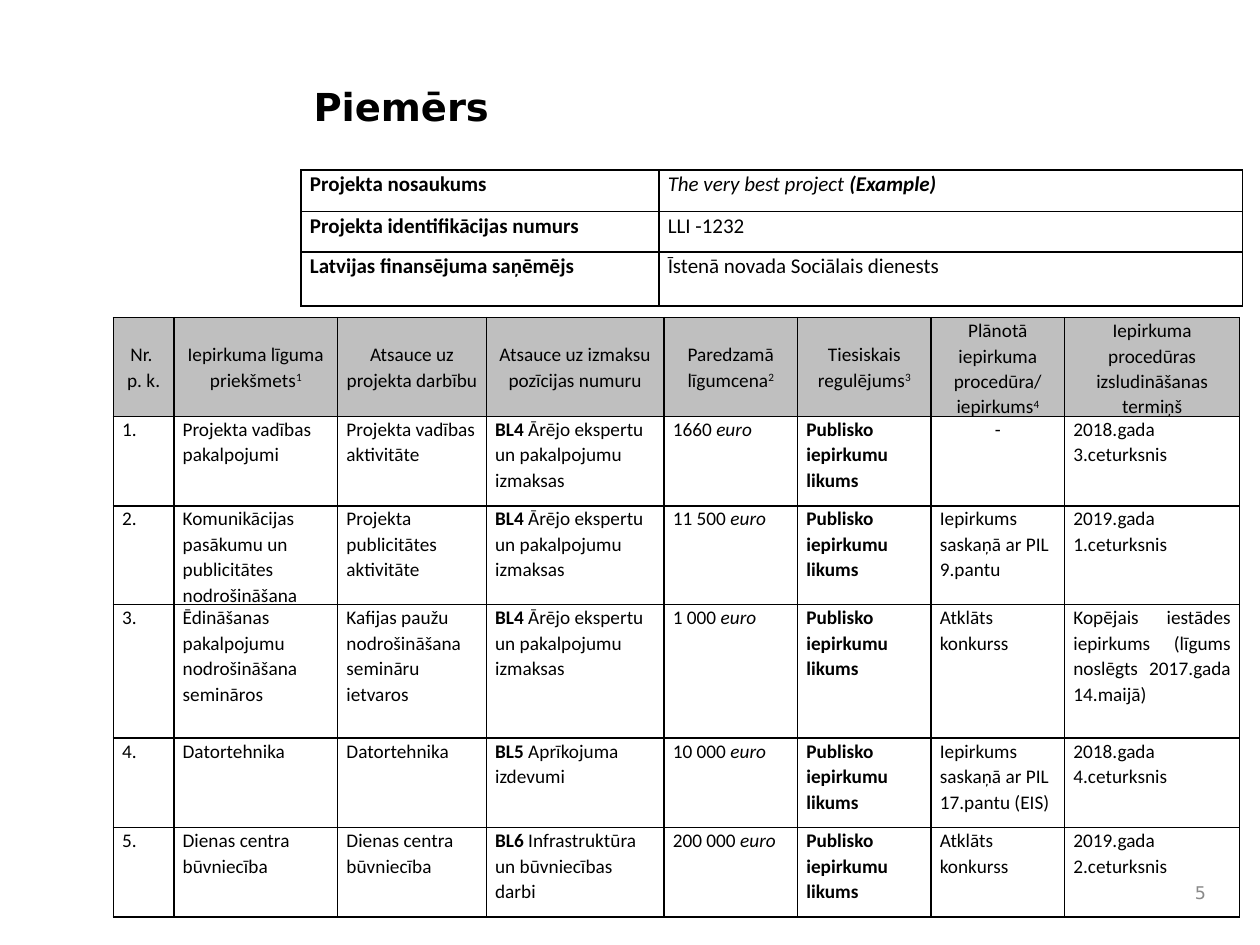
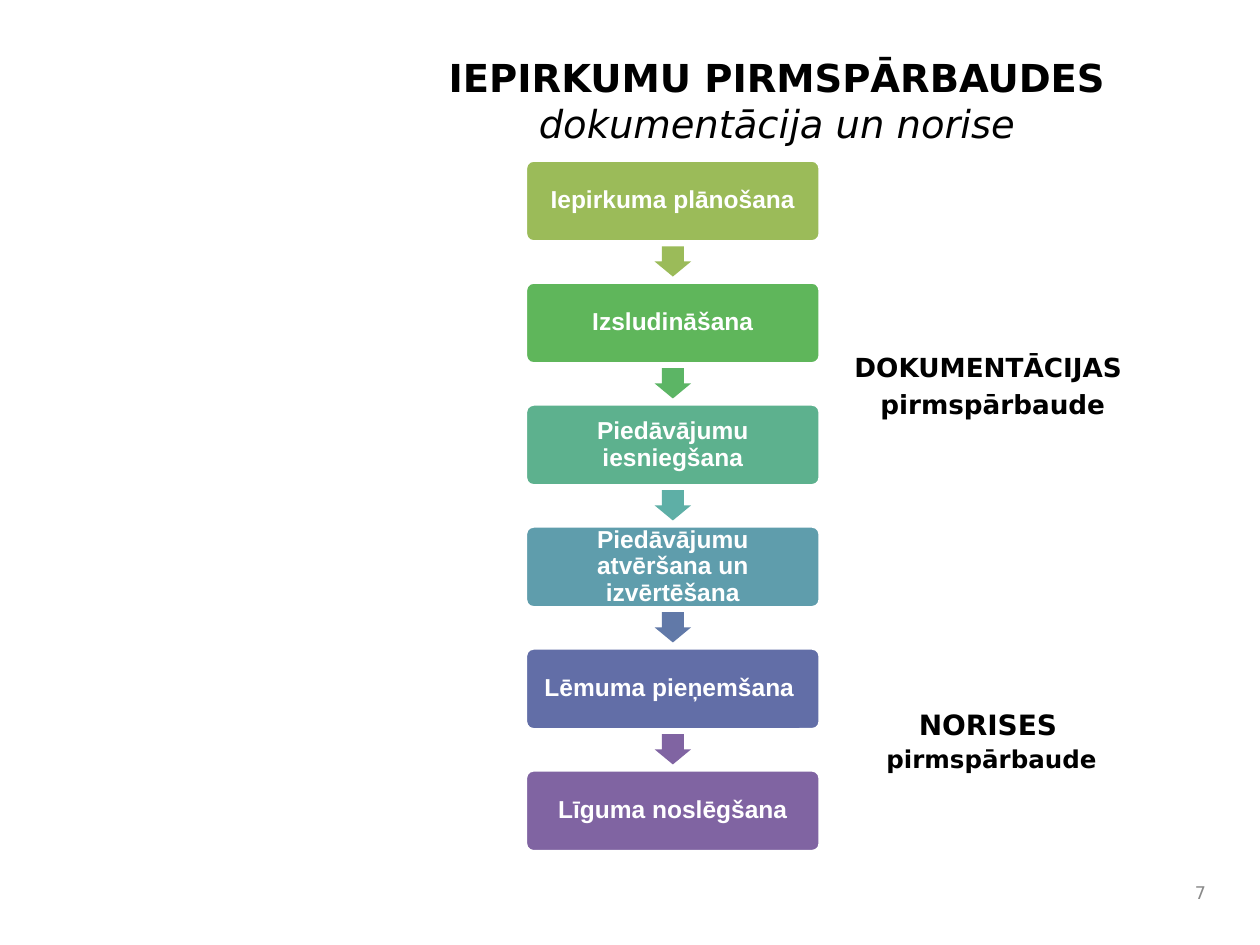
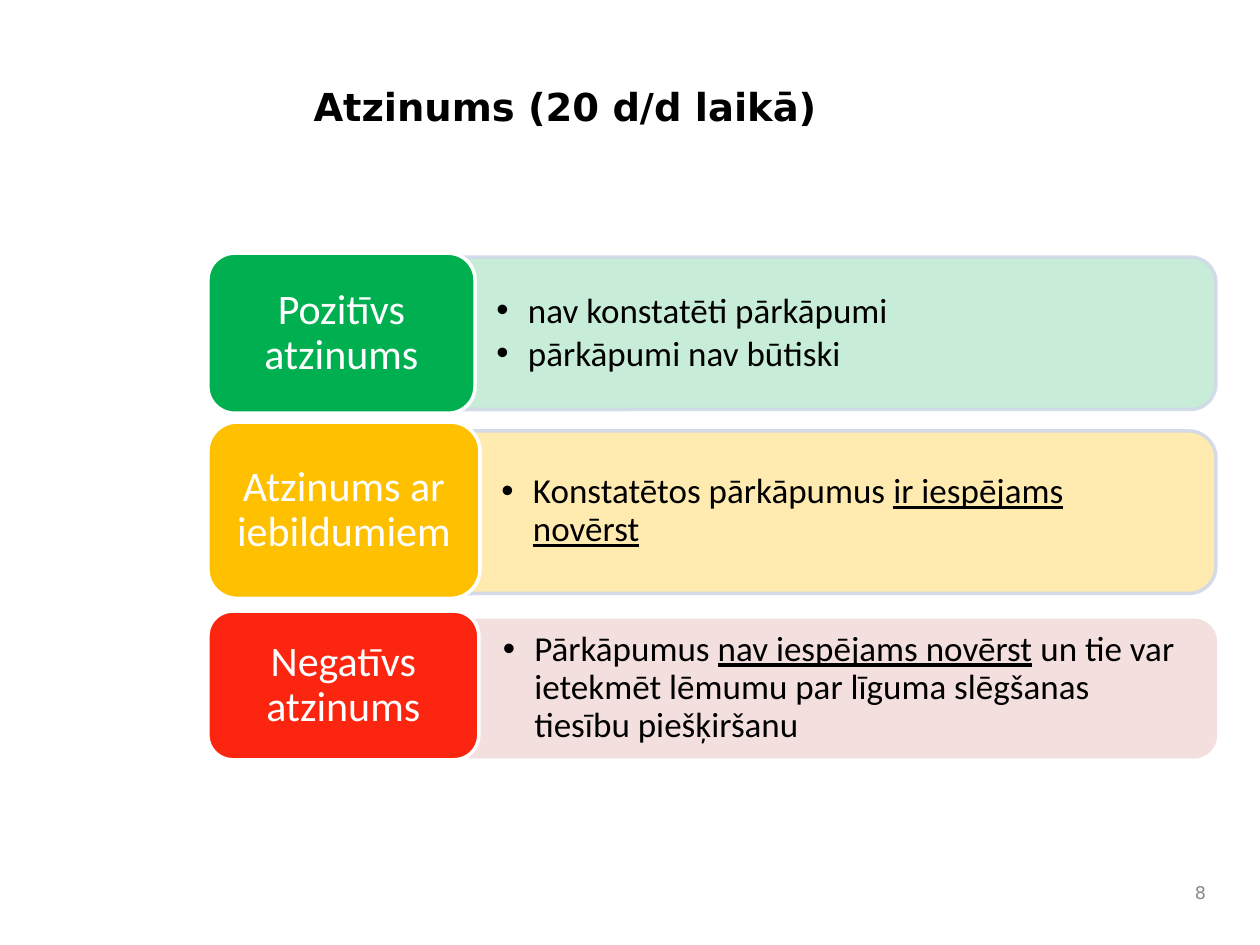
"""Build three slides on procurement plans and pre-checks."""
import dataclasses
import typing

import lxml.etree
import pptx
import pptx.dml.color
import pptx.enum.shapes
import pptx.enum.text
import pptx.oxml.ns
import pptx.slide
import pptx.table
import pptx.text.text
import pptx.util

Inches = pptx.util.Inches
Pt = pptx.util.Pt
qn = pptx.oxml.ns.qn
Align = pptx.enum.text.PP_ALIGN
Anchor = pptx.enum.text.MSO_ANCHOR
Kind = pptx.enum.shapes.MSO_SHAPE


@dataclasses.dataclass(frozen=True)
class Theme:
    """Hold the colours, fonts and type sizes."""
    black: str = "000000"
    white: str = "FFFFFF"
    grey: str = "898989"
    head: str = "BFBFBF"
    edge: str = "D0D8E8"
    sans: str = "DejaVu Sans"
    body: str = "Calibri"
    plain: str = "Arial"
    title: float = 22
    label: float = 24
    point: float = 20
    step: float = 14
    note: float = 15
    fact: float = 12
    cell: float = 11
    page: float = 10


THEME = Theme()


class Run(typing.NamedTuple):
    """Text with marks: b bold, i italic, u underline, ^ superscript."""
    text: str
    look: str = ""
    size: float = 0


class Box(typing.NamedTuple):
    """Place and size in inches."""
    left: float
    top: float
    width: float
    height: float


class Style(typing.NamedTuple):
    """Type and paragraph settings of a text."""
    font: str
    size: float
    color: str = THEME.black
    align: Align = Align.LEFT
    space: float = 1
    before: float = 0
    after: float = 0
    dots: bool = False
    anchor: Anchor = Anchor.TOP
    inset: tuple[float, float] = (0.1, 0.05)


Line = tuple[Run, ...]

TITLE = Style(THEME.sans, THEME.title)
PAGE = Style(THEME.sans, THEME.page, THEME.grey, Align.RIGHT, anchor=Anchor.MIDDLE)
FACT = Style(THEME.body, THEME.fact, space=1.07, inset=(0.07, 0))
CELL = FACT._replace(size=THEME.cell)
HEAD = CELL._replace(align=Align.CENTER, anchor=Anchor.MIDDLE)
STEP = Style(THEME.plain, THEME.step, THEME.white, Align.CENTER, 0.9,
             anchor=Anchor.MIDDLE, inset=(0.08, 0.08))
NOTE = Style(THEME.sans, THEME.note, align=Align.CENTER, before=3)
LABEL = Style(THEME.body, THEME.label, THEME.white, Align.CENTER, 0.9,
              anchor=Anchor.MIDDLE, inset=(0.16, 0.11))
POINT = Style(THEME.body, THEME.point, space=0.9, after=3, dots=True,
              anchor=Anchor.MIDDLE, inset=(0.27, 0.14))


def tint(code: str) -> pptx.dml.color.RGBColor:
    """Turn a hex code into a colour."""
    return pptx.dml.color.RGBColor.from_string(code)


def place(box: Box) -> list[pptx.util.Length]:
    """Turn a box into lengths."""
    return [Inches(side) for side in box]


def write(frame: pptx.text.text.TextFrame, lines: typing.Sequence[Line], style: Style) -> None:
    """Fill a text frame run by run."""
    for at, line in enumerate(lines):
        para = frame.add_paragraph() if at else frame.paragraphs[0]
        if style.dots:
            props = para._p.get_or_add_pPr()
            props.set("marL", str(Inches(0.25)))
            props.set("indent", str(Inches(-0.25)))
            lxml.etree.SubElement(props, qn("a:buFont"), typeface="Arial")
            lxml.etree.SubElement(props, qn("a:buChar"), char="•")
        para.alignment = style.align
        para.line_spacing = style.space
        para.space_before = Pt(style.before if at else 0)
        para.space_after = Pt(style.after)
        for part in line:
            for turn, piece in enumerate(part.text.split("\n")):
                if turn:
                    para.add_line_break()
                if not piece:
                    continue
                run = para.add_run()
                run.text = piece
                font = run.font
                font.name = style.font
                font.size = Pt(part.size or style.size)
                font.color.rgb = tint(style.color)
                font.bold = "b" in part.look
                font.italic = "i" in part.look
                font.underline = "u" in part.look
                if "^" in part.look:
                    run._r.get_or_add_rPr().set("baseline", "30000")


def settle(frame: pptx.text.text.TextFrame, lines: typing.Sequence[Line], style: Style) -> None:
    """Set wrap, anchor and insets, then write the text."""
    frame.word_wrap = True
    frame.vertical_anchor = style.anchor
    frame.margin_left = frame.margin_right = Inches(style.inset[0])
    frame.margin_top = frame.margin_bottom = Inches(style.inset[1])
    write(frame, lines, style)


def add_text(slide: pptx.slide.Slide, box: Box, lines: typing.Sequence[Line], style: Style) -> None:
    """Add a text box."""
    settle(slide.shapes.add_textbox(*place(box)).text_frame, lines, style)


def add_form(slide: pptx.slide.Slide, kind: Kind, box: Box, fill: str, line: str = "") -> typing.Any:
    """Add a flat preset shape."""
    form = slide.shapes.add_shape(kind, *place(box))
    form.shadow.inherit = False
    form.fill.solid()
    form.fill.fore_color.rgb = tint(fill)
    if line:
        form.line.color.rgb = tint(line)
        form.line.width = Pt(2)
    else:
        form.line.fill.background()
    return form


def add_cell(cell: typing.Any, line: Line, style: Style, fill: str) -> None:
    """Style one table cell with black borders."""
    cell.margin_left = cell.margin_right = Inches(style.inset[0])
    cell.margin_top = cell.margin_bottom = Inches(style.inset[1])
    cell.vertical_anchor = style.anchor
    if fill:
        cell.fill.solid()
        cell.fill.fore_color.rgb = tint(fill)
    else:
        cell.fill.background()
    props = cell._tc.get_or_add_tcPr()
    for at, side in enumerate("LRTB"):
        edge = lxml.etree.Element(qn(f"a:ln{side}"), w=str(Pt(1)))
        paint = lxml.etree.SubElement(edge, qn("a:solidFill"))
        lxml.etree.SubElement(paint, qn("a:srgbClr"), val=THEME.black)
        props.insert(at, edge)
    write(cell.text_frame, [line], style)


def add_grid(slide: pptx.slide.Slide, left: float, top: float, wide: typing.Sequence[float],
             tall: typing.Sequence[float]) -> pptx.table.Table:
    """Add a bare table with set columns and rows."""
    box = Box(left, top, sum(wide), sum(tall))
    grid = slide.shapes.add_table(len(tall), len(wide), *place(box)).table
    grid.first_row = grid.horz_banding = False
    for col, width in zip(grid.columns, wide):
        col.width = Inches(width)
    for row, height in zip(grid.rows, tall):
        row.height = Inches(height)
    return grid


def add_slide(deck: typing.Any, page: str, title: Line, box: Box,
              align: Align = Align.LEFT) -> pptx.slide.Slide:
    """Add a blank slide with its title and number."""
    slide = deck.slides.add_slide(deck.slide_layouts[6])
    add_text(slide, box, [title], TITLE._replace(align=align))
    add_text(slide, Box(9.23, 6.92, 0.44, 0.33), [(Run(page),)], PAGE)
    return slide


FACTS: list[tuple[str, Line]] = [
    ("Projekta nosaukums", (Run("The very best project ", "i"), Run("(Example)", "bi"))),
    ("Projekta identifikācijas numurs", (Run("LLI -1232"),)),
    ("Latvijas finansējuma saņēmējs", (Run("Īstenā novada Sociālais dienests"),)),
]

HEADS = [
    ("Nr. \np. k.", ""),
    ("Iepirkuma līguma priekšmets", "1"),
    ("Atsauce uz projekta darbību", ""),
    ("Atsauce uz izmaksu pozīcijas numuru", ""),
    ("Paredzamā līgumcena", "2"),
    ("Tiesiskais regulējums", "3"),
    ("Plānotā iepirkuma procedūra/\niepirkums", "4"),
    ("Iepirkuma procedūras izsludināšanas termiņš", ""),
]


class Plan(typing.NamedTuple):
    """One planned purchase."""
    goal: str
    task: str
    code: str
    cost: str
    price: str
    way: str
    term: str


EXPERT = "Ārējo ekspertu un pakalpojumu izmaksas"
PLANS = [
    Plan("Projekta vadības pakalpojumi", "Projekta vadības aktivitāte", "BL4", EXPERT,
         "1660", "-", "2018.gada 3.ceturksnis"),
    Plan("Komunikācijas pasākumu un publicitātes nodrošināšana",
         "Projekta publicitātes aktivitāte", "BL4", EXPERT,
         "11 500", "Iepirkums saskaņā ar PIL 9.pantu", "2019.gada 1.ceturksnis"),
    Plan("Ēdināšanas pakalpojumu nodrošināšana semināros",
         "Kafijas paužu nodrošināšana semināru ietvaros", "BL4", EXPERT, "1 000",
         "Atklāts konkurss", "Kopējais iestādes iepirkums (līgums noslēgts 2017.gada 14.maijā)"),
    Plan("Datortehnika", "Datortehnika", "BL5", "Aprīkojuma izdevumi", "10 000",
         "Iepirkums saskaņā ar PIL 17.pantu (EIS)", "2018.gada 4.ceturksnis"),
    Plan("Dienas centra būvniecība", "Dienas centra būvniecība", "BL6",
         "Infrastruktūra un būvniecības darbi", "200 000", "Atklāts konkurss",
         "2019.gada 2.ceturksnis"),
]


def draw_plan(deck: typing.Any) -> None:
    """Draw the sample purchase plan."""
    slide = add_slide(deck, "5", (Run("Piemērs", "b"),), Box(2.39, 0.61, 7.11, 0.94))
    grid = add_grid(slide, 2.39, 1.35, (2.84, 4.63), (0.33, 0.32, 0.43))
    for row, (name, value) in enumerate(FACTS):
        add_cell(grid.cell(row, 0), (Run(name, "b"),), FACT, "")
        add_cell(grid.cell(row, 1), value, FACT, "")

    grid = add_grid(slide, 0.9, 2.52, (0.48, 1.3, 1.18, 1.41, 1.06, 1.06, 1.06, 1.39),
                    (0.78, 0.71, 0.78, 1.06, 0.71, 0.71))
    for col, (name, mark) in enumerate(HEADS):
        add_cell(grid.cell(0, col), (Run(name), Run(mark, "^")), HEAD, THEME.head)
    for row, plan in enumerate(PLANS, 1):
        lines: list[Line] = [
            (Run(f"{row}."),),
            (Run(plan.goal),),
            (Run(plan.task),),
            (Run(plan.code, "b"), Run(f" {plan.cost}")),
            (Run(f"{plan.price} "), Run("euro", "i")),
            (Run("Publisko iepirkumu likums", "b"),),
            (Run(plan.way),),
            (Run(plan.term),),
        ]
        for col, line in enumerate(lines):
            align = Align.JUSTIFY if col in (0, 4, 5, 7) else Align.LEFT
            if line[0].text == "-":
                align = Align.CENTER
            add_cell(grid.cell(row, col), line, CELL._replace(align=align), "")


STEPS = [
    ("Iepirkuma plānošana", "9BBB59", "9BBB59"),
    ("Izsludināšana", "5FB65B", "5CB565"),
    ("Piedāvājumu iesniegšana", "5DB18E", "5EAFA6"),
    ("Piedāvājumu atvēršana un izvērtēšana", "5F9DAC", "6179A8"),
    ("Lēmuma pieņemšana ", "626EA7", "8064A2"),
    ("Līguma noslēgšana", "8064A2", ""),
]


def draw_steps(deck: typing.Any) -> None:
    """Draw the chain of purchase steps."""
    title = (Run("IEPIRKUMU PIRMSPĀRBAUDES\n", "b"), Run("dokumentācija un norise", "i"))
    slide = add_slide(deck, "7", title, Box(2.83, 0.38, 6.67, 0.88), Align.CENTER)
    pitch = (6.11 - 1.27) / (len(STEPS) - 1)
    for at, (name, fill, next_fill) in enumerate(STEPS):
        top = 1.27 + at * pitch
        step = add_form(slide, Kind.ROUNDED_RECTANGLE, Box(4.17, top, 2.34, 0.65), fill, THEME.white)
        step.adjustments[0] = 0.1
        settle(step.text_frame, [(Run(name, "b"),)], STEP)
        if next_fill:
            arrow = add_form(slide, Kind.RIGHT_ARROW, Box(5.22, top + 0.66, 0.24, 0.29), next_fill)
            arrow.rotation = 90
            arrow.adjustments[0] = 0.6
            arrow.adjustments[1] = 0.5
    add_text(slide, Box(6.68, 2.74, 2.4, 0.69),
             [(Run("DOKUMENTĀCIJAS ", "b"),), (Run("pirmspārbaude", "b"),)], NOTE)
    add_text(slide, Box(6.9, 5.6, 1.94, 0.64),
             [(Run("NORISES", "b", 16), Run(" ", "b", 12)), (Run("pirmspārbaude", "b", 14),)],
             NOTE._replace(space=0.9))


class Verdict(typing.NamedTuple):
    """One kind of opinion with its bar, label and points."""
    name: str
    fill: str
    label: Box
    bar: Box
    shade: str
    alpha: int
    edge: str
    text: Box
    lines: list[Line]


VERDICTS = [
    Verdict("Pozitīvs atzinums", "00B050", Box(1.65, 2.01, 2.12, 1.27),
            Box(3.67, 2.04, 5.98, 1.21), "00B050", 22, THEME.edge, Box(3.67, 2.1, 5.92, 1.09),
            [(Run("nav konstatēti pārkāpumi"),), (Run("pārkāpumi nav būtiski"),)]),
    Verdict("Atzinums ar iebildumiem", "FFC000", Box(1.65, 3.35, 2.16, 1.4),
            Box(3.71, 3.42, 5.94, 1.29), "FFC000", 31, THEME.edge, Box(3.71, 3.48, 5.88, 1.16),
            [(Run("Konstatētos pārkāpumus "), Run("ir iespējams novērst", "u"))]),
    Verdict("Negatīvs atzinums", "FC2610", Box(1.65, 4.85, 2.15, 1.18),
            Box(3.72, 4.91, 5.94, 1.11), "F2DCDB", 90, "", Box(3.72, 4.96, 5.89, 1),
            [(Run("Pārkāpumus "), Run("nav iespējams novērst", "u"),
              Run(" un tie var ietekmēt lēmumu par līguma slēgšanas tiesību piešķiršanu"))]),
]


def add_bar(slide: pptx.slide.Slide, item: Verdict) -> None:
    """Add a clear bar, turned so its round corners face right."""
    left, top, width, height = item.bar
    shift = (width - height) / 2
    box = Box(left + shift, top - shift, height, width)
    bar = add_form(slide, Kind.ROUND_2_SAME_RECTANGLE, box, item.shade, item.edge)
    bar.rotation = 90
    for color, alpha in zip(bar._element.spPr.iter(qn("a:srgbClr")), (item.alpha, 90)):
        lxml.etree.SubElement(color, qn("a:alpha"), val=str(alpha * 1000))


def draw_verdicts(deck: typing.Any) -> None:
    """Draw the three kinds of opinion."""
    slide = add_slide(deck, "8", (Run("Atzinums (20 d/d laikā)", "b"),), Box(2.39, 0.61, 7.27, 0.94))
    for item in VERDICTS:
        add_bar(slide, item)
        add_text(slide, item.text, item.lines, POINT)
        label = add_form(slide, Kind.ROUNDED_RECTANGLE, item.label, item.fill, THEME.white)
        settle(label.text_frame, [(Run(item.name),)], LABEL)


def main() -> None:
    """Build and save the deck."""
    deck = pptx.Presentation()
    deck.slide_width = Inches(10)
    deck.slide_height = Inches(7.5)
    draw_plan(deck)
    draw_steps(deck)
    draw_verdicts(deck)
    deck.save("out.pptx")


if __name__ == "__main__":
    main()
